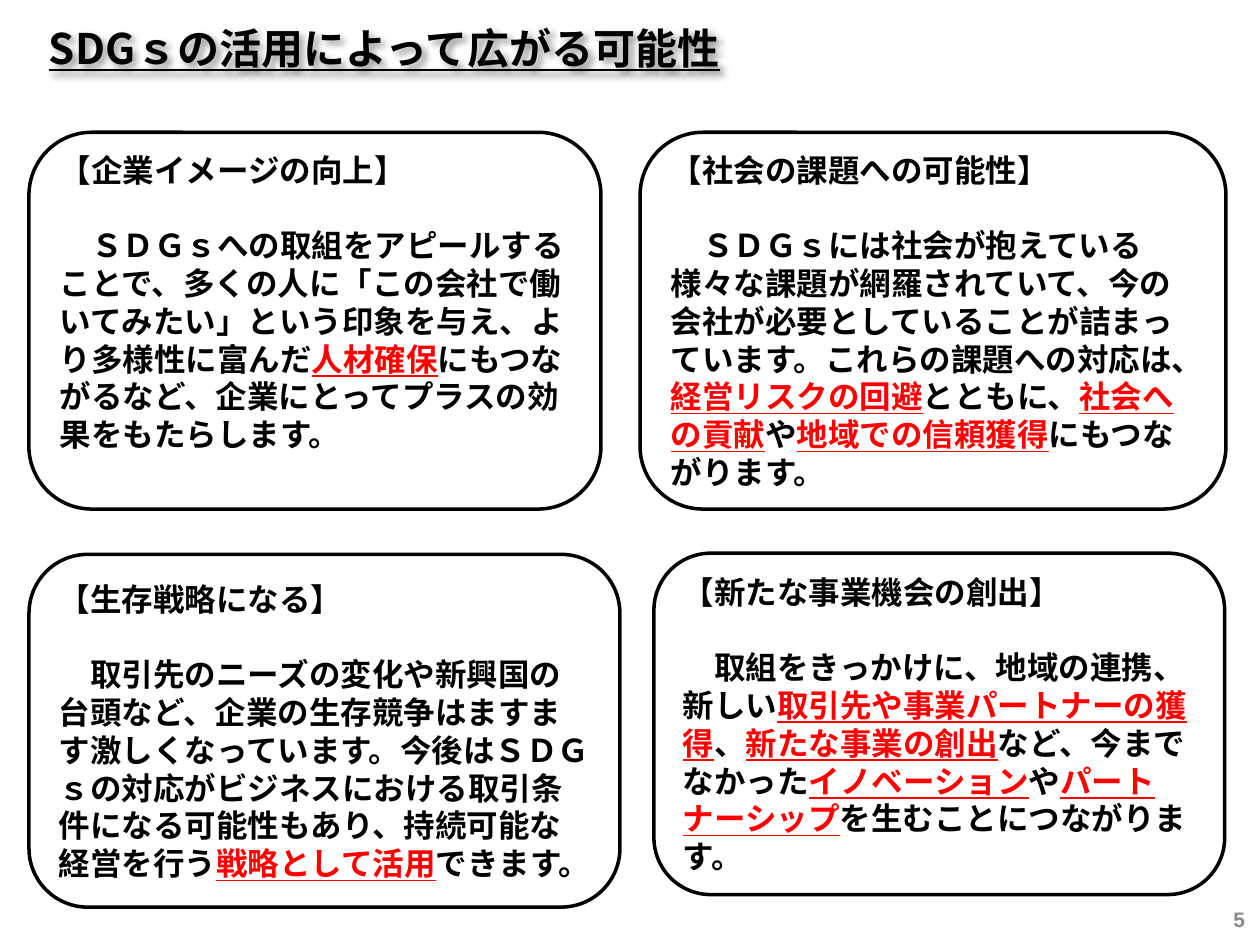
from lxml import etree
from pptx import Presentation
from pptx.dml.color import RGBColor
from pptx.enum import shapes, text
from pptx.oxml.ns import qn
from pptx.util import Inches, Pt

CJK = "Noto Sans CJK JP"
LEAD = Pt(21.6)

# Phrases between bars are stressed in red.
CARDS = [
    ((0.23, 1.05, 4.54, 2.99), 0.3, "【企業イメージの向上】",
     "　ＳＤＧｓへの取組をアピールすることで、多くの人に「この会社で働いてみたい」という印象を与え、"
     "より多様性に富んだ|人材確保|にもつながるなど、企業にとってプラスの効果をもたらします。"),
    ((5.08, 1.05, 4.65, 2.99), 0, "【社会の課題への可能性】",
     "　ＳＤＧｓには社会が抱えている様々な課題が網羅されていて、今の会社が必要としていることが"
     "詰まっています。これらの課題への対応は、|経営リスクの回避|とともに、|社会への貢献|や"
     "|地域での信頼獲得|にもつながります。"),
    ((0.23, 4.4, 4.69, 2.8), 0, "【生存戦略になる】",
     "　取引先のニーズの変化や新興国の台頭など、企業の生存競争はますます激しくなっています。"
     "今後はＳＤＧｓの対応がビジネスにおける取引条件になる可能性もあり、持続可能な経営を行う"
     "|戦略として活用|できます。"),
    ((5.19, 4.39, 4.53, 2.71), 0, "【新たな事業機会の創出】",
     "　取組をきっかけに、地域の連携、新しい|取引先や事業パートナーの獲得|、|新たな事業の創出|など、"
     "今までなかった|イノベーション|や|パートナーシップ|を生むことにつながります。"),
]


def color(code):
    return RGBColor.from_string(code)


def style(run, size, face, code="000000", under=False):
    font = run.font
    font.size, font.name, font.bold = Pt(size), face, True
    font.underline = under
    font.color.rgb = color(code)
    props = run._r.get_or_add_rPr()
    etree.SubElement(props, qn("a:ea")).set("typeface", CJK)


def add_label(slide, box, words, align):
    shape = slide.shapes.add_textbox(*map(Inches, box))
    frame = shape.text_frame
    frame.word_wrap = True
    frame.vertical_anchor = text.MSO_ANCHOR.MIDDLE
    para = frame.paragraphs[0]
    para.text, para.alignment = words, align
    return shape, para.runs[0]


def add_title(slide, box):
    shape, run = add_label(slide, box, "SDGｓの活用によって広がる可能性",
                           text.PP_ALIGN.LEFT)
    style(run, 24, CJK, under=True)
    effects = etree.SubElement(shape._element.spPr, qn("a:effectLst"))
    shadow = etree.SubElement(effects, qn("a:outerShdw"), blurRad="50800",
                              dist="38100", dir="2700000", algn="tl")
    tint = etree.SubElement(shadow, qn("a:srgbClr"), val="000000")
    etree.SubElement(tint, qn("a:alpha"), val="40000")


def add_card(slide, box, lift, head, body):
    """Place a rounded card; lift is extra room kept below its text."""
    card = slide.shapes.add_shape(shapes.MSO_SHAPE.ROUNDED_RECTANGLE,
                                  *map(Inches, box))
    card.shadow.inherit = False
    card.fill.background()
    card.line.color.rgb = color("000000")
    card.line.width = Pt(2)
    frame = card.text_frame
    frame.word_wrap = True
    frame.vertical_anchor = text.MSO_ANCHOR.MIDDLE
    frame.margin_bottom = Inches(0.05 + lift)
    frame.text = head + "\n"
    top, main = frame.paragraphs
    for para in (top, main):
        para.alignment = text.PP_ALIGN.LEFT
        para.line_spacing = LEAD
    main.space_before = LEAD
    style(top.runs[0], 18, "Calibri")
    for i, part in enumerate(body.split("|")):
        run = main.add_run()
        run.text = part
        red = i % 2 == 1
        style(run, 18, "Calibri", "FF0000" if red else "000000", red)


def add_number(slide, box):
    _, run = add_label(slide, box, "5", text.PP_ALIGN.RIGHT)
    style(run, 12, "Arial", "898989")


def main():
    deck = Presentation()
    deck.slide_width, deck.slide_height = Inches(10), Inches(7.5)
    slide = deck.slides.add_slide(deck.slide_layouts[6])
    add_number(slide, (9.53, 7.09, 0.45, 0.41))
    add_title(slide, (0.29, 0.09, 9.24, 0.57))
    for card in CARDS:
        add_card(slide, *card)
    deck.save("out.pptx")


if __name__ == "__main__":
    main()
